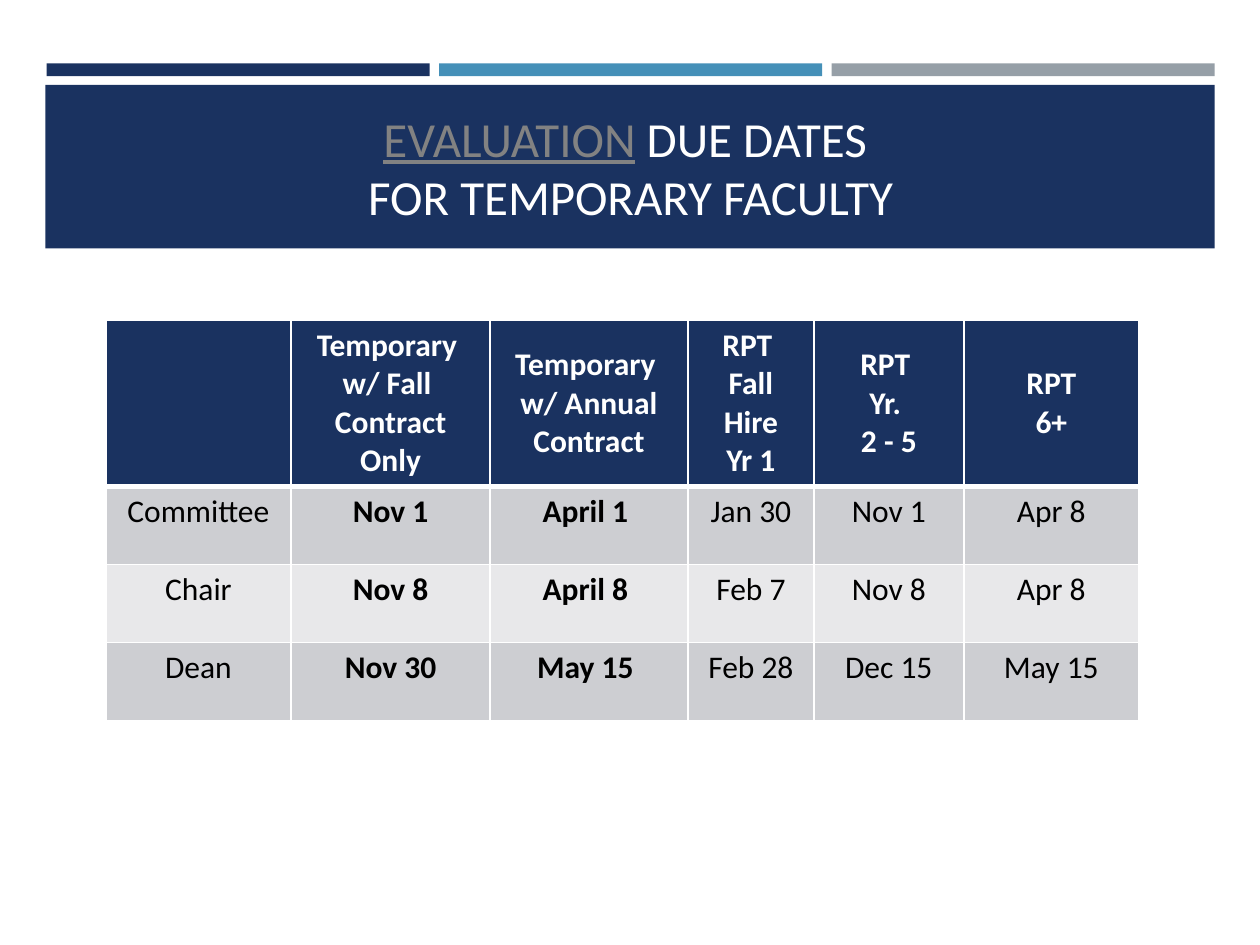
from dataclasses import dataclass

from lxml.etree import SubElement
from pptx import Presentation
from pptx.dml.color import RGBColor as Rgb
from pptx.enum.shapes import MSO_SHAPE as Shape
from pptx.enum.text import MSO_ANCHOR as Anchor, MSO_AUTO_SIZE as Fit, PP_ALIGN as Align
from pptx.oxml import parse_xml
from pptx.oxml.ns import nsdecls, qn
from pptx.util import Inches, Pt

COLORS = {
    "navy": "1A3260", "blue": "4590B8", "gray": "969FA7", "link": "828282",
    "odd": "CDCED2", "even": "E8E8EA", "white": "FFFFFF", "black": "000000",
}
FONT = "Calibri"
WIDE, HIGH = 10, 7.5


@dataclass
class Box:
    """A filled box, placed in shares of the slide's size."""
    left: float
    top: float
    width: float
    height: float
    color: str

    def place(self) -> tuple:
        return (Inches(self.left * WIDE), Inches(self.top * HIGH),
                Inches(self.width * WIDE), Inches(self.height * HIGH))


@dataclass
class Column:
    """A table column: width in inches, heading lines and dates."""
    width: float
    head: str
    dates: tuple
    bold: bool = False


STRIPE, STEP = 0.304, 0.3115
BOXES = [Box(0.037 + i * STEP, 0.067, STRIPE, 0.0137, color)
         for i, color in enumerate(("navy", "blue", "gray"))]
BOXES.append(Box(0.036, 0.09, 0.928, 0.173, "navy"))

COLUMNS = [
    Column(1.47, "", ("Committee", "Chair", "Dean")),
    Column(1.58, "Temporary \nw/ Fall \nContract\nOnly", ("Nov 1", "Nov 8", "Nov 30"), True),
    Column(1.57, "Temporary \nw/ Annual\nContract", ("April 1 ", "April 8 ", "May 15 "), True),
    Column(1, "RPT \nFall Hire\nYr 1", ("Jan 30", "Feb 7", "Feb 28")),
    Column(1.19, "RPT \nYr. \n2 - 5", ("Nov 1", "Nov 8", "Dec 15")),
    Column(1.39, "RPT\n6+", ("Apr 8", "Apr 8", "May 15")),
]
HEAD, ROW = 1.31, 0.62


def rgb(name: str) -> Rgb:
    return Rgb.from_string(COLORS[name])


def style(font, size: float, color: str, bold: bool = False) -> None:
    font.name, font.size, font.bold = FONT, Pt(size), bold
    font.color.rgb = rgb(color)


def draw_box(slide, box: Box) -> None:
    shape = slide.shapes.add_shape(Shape.RECTANGLE, *box.place())
    shape.shadow.inherit = False
    shape.fill.solid()
    shape.fill.fore_color.rgb = rgb(box.color)
    shape.line.fill.background()


def draw_title(slide) -> None:
    title = slide.shapes.title
    title.left, title.top = Inches(0.48), Inches(0.77)
    title.width, title.height = Inches(9.05), Inches(1.11)
    slide.shapes._spTree.append(title._element)  # lift above the band
    frame = title.text_frame
    frame.auto_size, frame.vertical_anchor = Fit.NONE, Anchor.MIDDLE
    line = frame.paragraphs[0]
    line.alignment = Align.CENTER
    style(line.font, 28, "white")
    link = line.add_run()
    link.text = "EVALUATION"
    link.font.underline = True
    link.font.color.rgb = rgb("link")
    line.add_run().text = " DUE DATES "
    line.add_line_break()
    line.add_run().text = "FOR TEMPORARY FACULTY"


def add_edges(cell, base: float) -> None:
    """Draw white borders; they must stand before the fill."""
    props = cell._tc.get_or_add_tcPr()
    for i, (side, width) in enumerate(zip("LRTB", (1, 1, 1, base))):
        edge = parse_xml(f'<a:ln{side} {nsdecls("a")} w="{Pt(width)}"/>')
        fill = SubElement(edge, qn("a:solidFill"))
        SubElement(fill, qn("a:srgbClr"), val=COLORS["white"])
        props.insert(i, edge)


def fill_cell(cell, text: str, fill: str, ink: str, bold: bool, base: float) -> None:
    cell.fill.solid()
    cell.fill.fore_color.rgb = rgb(fill)
    cell.text = text
    for line in cell.text_frame.paragraphs:
        line.alignment = Align.CENTER
        style(line.font, 18, ink, bold)
    add_edges(cell, base)


def draw_table(slide) -> None:
    count = len(COLUMNS[0].dates)
    width = sum(col.width for col in COLUMNS)
    table = slide.shapes.add_table(
        count + 1, len(COLUMNS), Inches(0.84), Inches(2.54),
        Inches(width), Inches(HEAD + count * ROW)).table
    for r, row in enumerate(table.rows):
        row.height = Inches(ROW if r else HEAD)
    for c, col in enumerate(COLUMNS):
        table.columns[c].width = Inches(col.width)
        top = table.cell(0, c)
        top.vertical_anchor = Anchor.MIDDLE
        fill_cell(top, col.head, "navy", "white", True, 3)
        for r, date in enumerate(col.dates, 1):
            fill = "odd" if r % 2 else "even"
            fill_cell(table.cell(r, c), date, fill, "black", col.bold, 1)


def main() -> None:
    deck = Presentation()
    deck.slide_width, deck.slide_height = Inches(WIDE), Inches(HIGH)
    slide = deck.slides.add_slide(deck.slide_layouts[5])
    # Stripes and title band
    for box in BOXES:
        draw_box(slide, box)
    draw_title(slide)
    # Due dates
    draw_table(slide)
    deck.save("out.pptx")


if __name__ == "__main__":
    main()
